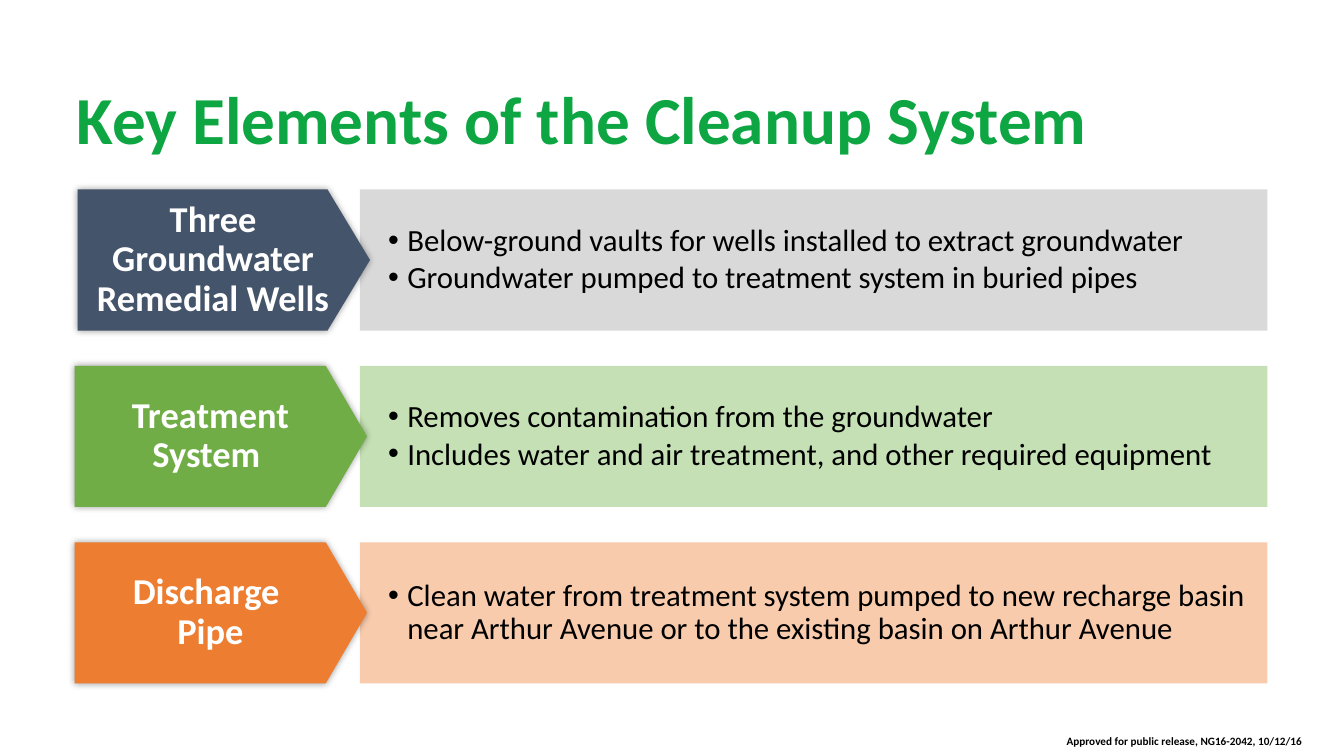
from lxml.etree import SubElement
from pptx import Presentation
from pptx.dml.color import RGBColor
from pptx.enum.shapes import MSO_SHAPE
from pptx.enum.text import MSO_ANCHOR, MSO_AUTO_SIZE, PP_ALIGN
from pptx.oxml.ns import qn
from pptx.util import Inches, Pt

TOP, PITCH, HIGH = 1.88, 1.75, 1.4
ROWS = [
    ("Three Groundwater Remedial Wells", 0.77, 0.301, "44546A", "D9D9D9",
     ["Below-ground vaults for wells installed to extract groundwater",
      "Groundwater pumped to treatment system in buried pipes"]),
    ("Treatment System ", 0.74, 0.292, "70AD47", "C5E0B4",
     ["Removes contamination from the groundwater",
      "Includes water and air treatment, and other required equipment"]),
    ("Discharge \vPipe", 0.74, 0.292, "ED7D31", "F8CBAD",
     ["Clean water from treatment system pumped to new recharge basin "
      "near Arthur Avenue or to the existing basin on Arthur Avenue"]),
]


def color(code):
    return RGBColor.from_string(code)


def place(shape, left, top, width, height):
    shape.left, shape.top = Inches(left), Inches(top)
    shape.width, shape.height = Inches(width), Inches(height)


def paint(shape, code):
    shape.fill.solid()
    shape.fill.fore_color.rgb = color(code)
    shape.line.fill.background()


def write(shape, text, size, code, bold, anchor, align, line=0.9, after=0):
    frame = shape.text_frame
    frame.text = text
    frame.word_wrap = True
    frame.auto_size = MSO_AUTO_SIZE.NONE
    frame.vertical_anchor = anchor
    for para in frame.paragraphs:
        para.alignment = align
        para.line_spacing = line
        para.space_before, para.space_after = Pt(0), Pt(after)
        for run in para.runs:
            run.font.name, run.font.size = "Calibri", Pt(size)
            run.font.bold = bold
            run.font.color.rgb = color(code)


def indent(para, left, first):
    props = para._p.get_or_add_pPr()
    props.set("marL", str(Inches(left)))
    props.set("indent", str(Inches(first)))
    return props


def glow(shape):
    shape.shadow.inherit = False
    effects = shape._element.spPr.find(qn("a:effectLst"))
    shade = SubElement(effects, qn("a:outerShdw"), blurRad=str(Pt(5)), dist="0",
                       algn="ctr", rotWithShape="0")
    black = SubElement(shade, qn("a:srgbClr"), val="000000")
    SubElement(black, qn("a:alpha"), val="40000")


def add_title(slide, text):
    title = slide.shapes.title
    place(title, 0.41, 0.81, 11.13, 0.69)
    write(title, text, 48, "0DA642", True, MSO_ANCHOR.TOP, PP_ALIGN.LEFT)
    indent(title.text_frame.paragraphs[0], 0.25, 0)


def add_list(panel, top, fill, items):
    place(panel, 3.57, top, 9, HIGH)
    paint(panel, fill)
    write(panel, "\n".join(items), 22, "000000", False,
          MSO_ANCHOR.MIDDLE, PP_ALIGN.LEFT, after=3)
    for para in panel.text_frame.paragraphs:
        para.level = 1
        props = indent(para, 0.37, -0.19)
        SubElement(props, qn("a:buFont"), typeface="Arial")
        SubElement(props, qn("a:buChar"), char="•")


def add_label(slide, text, left, top, tip, fill):
    label = slide.shapes.add_shape(MSO_SHAPE.PENTAGON, 0, 0, 0, 0)
    place(label, left, top, 2.9, HIGH)
    label.adjustments[0] = tip
    paint(label, fill)
    glow(label)
    write(label, text, 26, "FFFFFF", True, MSO_ANCHOR.MIDDLE, PP_ALIGN.CENTER)


def add_note(slide, text):
    note = slide.shapes.add_textbox(0, 0, 0, 0)
    place(note, 10.48, 7.24, 2.57, 0.24)
    write(note, text, 8, "000000", True, MSO_ANCHOR.TOP, PP_ALIGN.LEFT, line=1.0)
    note.text_frame.word_wrap = False


def main():
    deck = Presentation()
    deck.slide_width, deck.slide_height = Inches(13.33), Inches(7.5)
    slide = deck.slides.add_slide(deck.slide_layouts.get_by_name("Comparison"))
    add_title(slide, "Key Elements of the Cleanup System")
    spare, *panels = list(slide.placeholders)[1:]
    spare._element.getparent().remove(spare._element)
    for row, (panel, entry) in enumerate(zip(panels, ROWS)):
        name, left, tip, dark, light, items = entry
        top = TOP + row * PITCH
        add_list(panel, top, light, items)
        add_label(slide, name, left, top, tip, dark)
    add_note(slide, "Approved for public release, NG16-2042, 10/12/16")
    deck.save("out.pptx")


if __name__ == "__main__":
    main()
